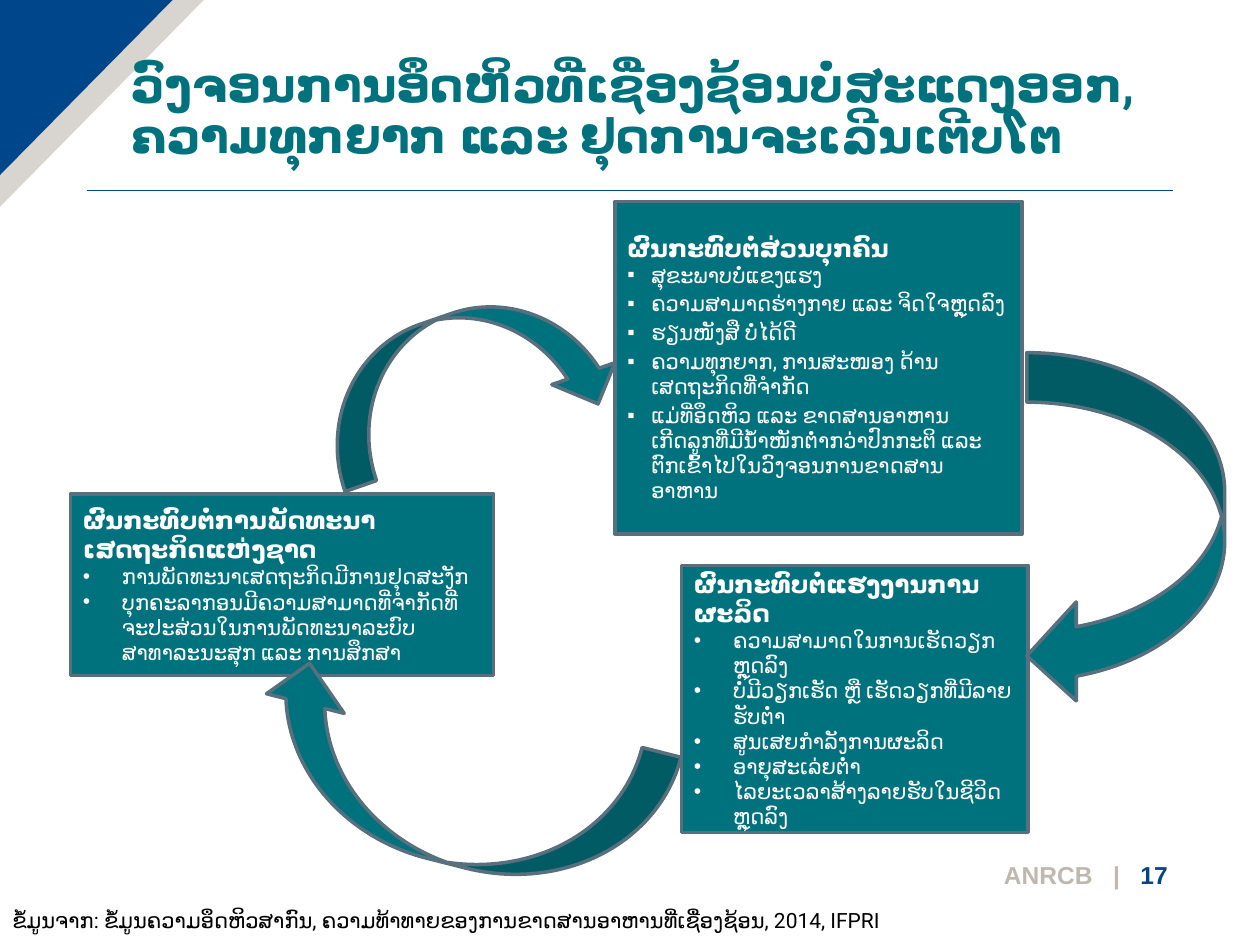
"""Build the slide on the cycle of hidden hunger, poverty and stunted growth."""
import dataclasses

import pptx
import pptx.dml.color
import pptx.enum.shapes
import pptx.enum.text
import pptx.oxml
import pptx.oxml.ns
import pptx.util

Cm, Pt = pptx.util.Cm, pptx.util.Pt
RGB = pptx.dml.color.RGBColor.from_string
MSO = pptx.enum.shapes.MSO_SHAPE
ANCHOR = pptx.enum.text.MSO_ANCHOR
ALIGN = pptx.enum.text.PP_ALIGN
NS = pptx.oxml.ns.nsdecls("a")


@dataclasses.dataclass(frozen=True)
class Theme:
    """Colours, fonts and type sizes of the slide."""
    teal: str = "00727E"
    blue: str = "00468B"
    sand: str = "BFB8AF"
    outline: str = "586F7D"
    white: str = "FFFFFF"
    black: str = "000000"
    font: str = "Roboto"
    footer_font: str = "Arial"
    title: int = 27
    heading: int = 14
    body: int = 12


T = Theme()

TITLE = "ວົງຈອນການອຶດຫິວທີ່ເຊື່ອງຊ້ອນບໍ່ສະແດງອອກ, ຄວາມທຸກຍາກ ແລະ ຢຸດການຈະເລີນເຕີບໂຕ"
SOURCE = "ຂໍ້ມູນຈາກ: ຂໍ້ມູນຄວາມອຶດຫິວສາກົນ, ຄວາມທ້າທາຍຂອງການຂາດສານອາຫານທີ່ເຊື່ອງຊ້ອນ, 2014, IFPRI"

EFFECTS = [
    dict(at=(12.4, 4.06, 8.2, 6.71), bullet="▪", indent=0.48, gap=2,
         heading="ຜົນກະທົບຕໍ່ສ່ວນບຸກຄົນ",
         items=["ສຸຂະພາບບໍ່ແຂງແຮງ",
                "ຄວາມສາມາດຮ່າງກາຍ ແລະ ຈິດໃຈຫຼຸດລົງ",
                "ຮຽນໜັງສື ບໍ່ໄດ້ດີ",
                "ຄວາມທຸກຍາກ, ການສະໜອງ ດ້ານເສດຖະກິດທີ່ຈຳກັດ",
                "ແມ່ທີ່ອຶດຫິວ ແລະ ຂາດສານອາຫານ ເກີດລູກທີ່ມີນໍ້າໜັກຕໍ່າກວ່າປົກກະຕິ ແລະ "
                "ຕົກເຂົ້າໄປໃນວົງຈອນການຂາດສານອາຫານ"]),
    dict(at=(13.74, 11.4, 6.99, 5.38), bullet="•", indent=0.79, gap=0,
         heading="ຜົນກະທົບຕໍ່ແຮງງານການຜະລິດ",
         items=["ຄວາມສາມາດໃນການເຮັດວຽກຫຼຸດລົງ",
                "ບໍ່ມີວຽກເຮັດ ຫຼື ເຮັດວຽກທີ່ມີລາຍຮັບຕໍ່າ",
                "ສູນເສຍກຳລັງການຜະລິດ",
                "ອາຍຸສະເລ່ຍຕໍ່າ",
                "ໄລຍະເວລາສ້າງລາຍຮັບໃນຊີວິດຫຼຸດລົງ"]),
    dict(at=(1.42, 9.96, 8.53, 3.66), bullet="•", indent=0.79, gap=0,
         heading="ຜົນກະທົບຕໍ່ການພັດທະນາເສດຖະກິດແຫ່ງຊາດ",
         items=["ການພັດທະນາເສດຖະກິດມີການຢຸດສະງັກ",
                "ບຸກຄະລາກອນມີຄວາມສາມາດທີ່ຈຳກັດທີ່ຈະປະສ່ວນໃນການພັດທະນາລະບົບສາທາລະນະສຸກ "
                "ແລະ ການສຶກສາ"]),
]

ARROWS = [
    (MSO.CURVED_LEFT_ARROW, (20.7, 7.11, 3.99, 7.11), 0),
    (MSO.CURVED_DOWN_ARROW, (4.93, 14.17, 8.53, 3.23), 194.2),
    (MSO.CURVED_DOWN_ARROW, (6.35, 6.3, 6.07, 2.69), 340.9),
]


def apply(obj, values):
    """Set each named attribute of an object."""
    for name, value in values.items():
        setattr(obj, name, value)


def add_run(p, text, size, color, bold=False, font=T.font):
    """Append a formatted run to a paragraph."""
    r = p.add_run()
    r.text = text
    apply(r.font, dict(size=Pt(size), bold=bold, name=font))
    r.font.color.rgb = RGB(color)
    r.font._element.append(pptx.oxml.parse_xml(f'<a:cs {NS} typeface="{font}"/>'))


def setup_frame(sp, anchor):
    """Give a shape its wrapping, anchor and insets, and return its text frame."""
    tf = sp.text_frame
    apply(tf, dict(word_wrap=True, vertical_anchor=anchor,
                   margin_left=Cm(0.25), margin_right=Cm(0.25),
                   margin_top=Cm(0.13), margin_bottom=Cm(0.13)))
    return tf


def add_text(s, at, anchor=ANCHOR.TOP):
    """Add an empty text box and return its text frame."""
    return setup_frame(s.shapes.add_textbox(*map(Cm, at)), anchor)


def add_bullet(p, char, indent):
    """Give a paragraph a white hanging bullet."""
    pPr = p._p.get_or_add_pPr()
    pPr.set("marL", str(Cm(indent)))
    pPr.set("indent", str(-Cm(indent)))
    for xml in (f'<a:buClr {NS}><a:srgbClr val="{T.white}"/></a:buClr>',
                f'<a:buFont {NS} typeface="Arial"/>',
                f'<a:buChar {NS} char="{char}"/>'):
        pPr.append(pptx.oxml.parse_xml(xml))


def add_teal_shape(s, kind, at):
    """Add an outlined teal preset shape."""
    sp = s.shapes.add_shape(kind, *map(Cm, at))
    sp.shadow.inherit = False
    sp.fill.solid()
    sp.fill.fore_color.rgb = RGB(T.teal)
    sp.line.color.rgb = RGB(T.outline)
    sp.line.width = Pt(2)
    return sp


def add_effect(s, at, heading, items, bullet, indent, gap):
    """Add a box with a bold heading and bulleted effects."""
    tf = setup_frame(add_teal_shape(s, MSO.RECTANGLE, at), ANCHOR.MIDDLE)
    p = tf.paragraphs[0]
    p.alignment = ALIGN.LEFT
    add_run(p, heading, T.heading, T.white, True)
    for i, item in enumerate(items):
        p = tf.add_paragraph()
        add_bullet(p, bullet, indent)
        apply(p, dict(alignment=ALIGN.LEFT, space_before=Pt(gap if i else 0)))
        add_run(p, item, T.body, T.white)


def add_arrow(s, kind, at, rotation):
    """Add a curved arrow of the cycle."""
    sp = add_teal_shape(s, kind, at)
    sp.rotation = rotation
    for i, value in enumerate((0.25, 0.5, 0.25)):
        sp.adjustments[i] = value


def add_corner(s, width, height, color, opacity=100):
    """Add a triangle filling the top left corner."""
    fb = s.shapes.build_freeform(0, 0)
    fb.add_line_segments([(Cm(width), 0), (0, Cm(height))], close=True)
    sp = fb.convert_to_shape()
    sp.shadow.inherit = False
    sp.line.fill.background()
    sp.fill.solid()
    sp.fill.fore_color.rgb = RGB(color)
    if opacity < 100:
        clr = sp._element.spPr.find(".//" + pptx.oxml.ns.qn("a:srgbClr"))
        clr.append(pptx.oxml.parse_xml(f'<a:alpha {NS} val="{opacity * 1000}"/>'))


def add_rule(s, left, right, y):
    """Add the thin rule below the title."""
    ln = s.shapes.add_connector(pptx.enum.shapes.MSO_CONNECTOR.STRAIGHT,
                                Cm(left), Cm(y), Cm(right), Cm(y))
    ln.line.color.rgb = RGB(T.blue)
    ln.line.width = Pt(0.75)
    ln._element.spPr.append(pptx.oxml.parse_xml(f"<a:effectLst {NS}/>"))


def add_footer(s):
    """Add the footer label and page number on tab stops."""
    tf = add_text(s, (19.63, 17.12, 4.19, 1.04), ANCHOR.MIDDLE)
    tf.margin_left = Cm(0.61)
    p = tf.paragraphs[0]
    stops = "".join(f'<a:tab pos="{Cm(x)}" algn="l"/>' for x in (2.2, 2.75))
    p._p.get_or_add_pPr().append(
        pptx.oxml.parse_xml(f"<a:tabLst {NS}>{stops}</a:tabLst>"))
    add_run(p, "ANRCB\t|\t", T.heading, T.sand, True, T.footer_font)
    add_run(p, "17", T.heading, T.blue, True, T.footer_font)


def main():
    """Build and save the slide."""
    prs = pptx.Presentation()
    apply(prs, dict(slide_width=Cm(25.4), slide_height=Cm(19.05)))
    s = prs.slides.add_slide(prs.slide_layouts[6])
    add_rule(s, 1.75, 23.65, 3.84)
    add_corner(s, 4.11, 4.17, T.sand, 60)
    add_corner(s, 3.48, 3.53, T.blue)
    p = add_text(s, (2.41, 0.61, 21.23, 2.82), ANCHOR.BOTTOM).paragraphs[0]
    p.line_spacing = 0.9
    add_run(p, TITLE, T.title, T.teal, True)
    p = add_text(s, (0, 18.16, 19.15, 0.76)).paragraphs[0]
    add_run(p, SOURCE, T.body, T.black)
    for effect in EFFECTS:
        add_effect(s, **effect)
    for arrow in ARROWS:
        add_arrow(s, *arrow)
    add_footer(s)
    prs.save("out.pptx")


if __name__ == "__main__":
    main()
